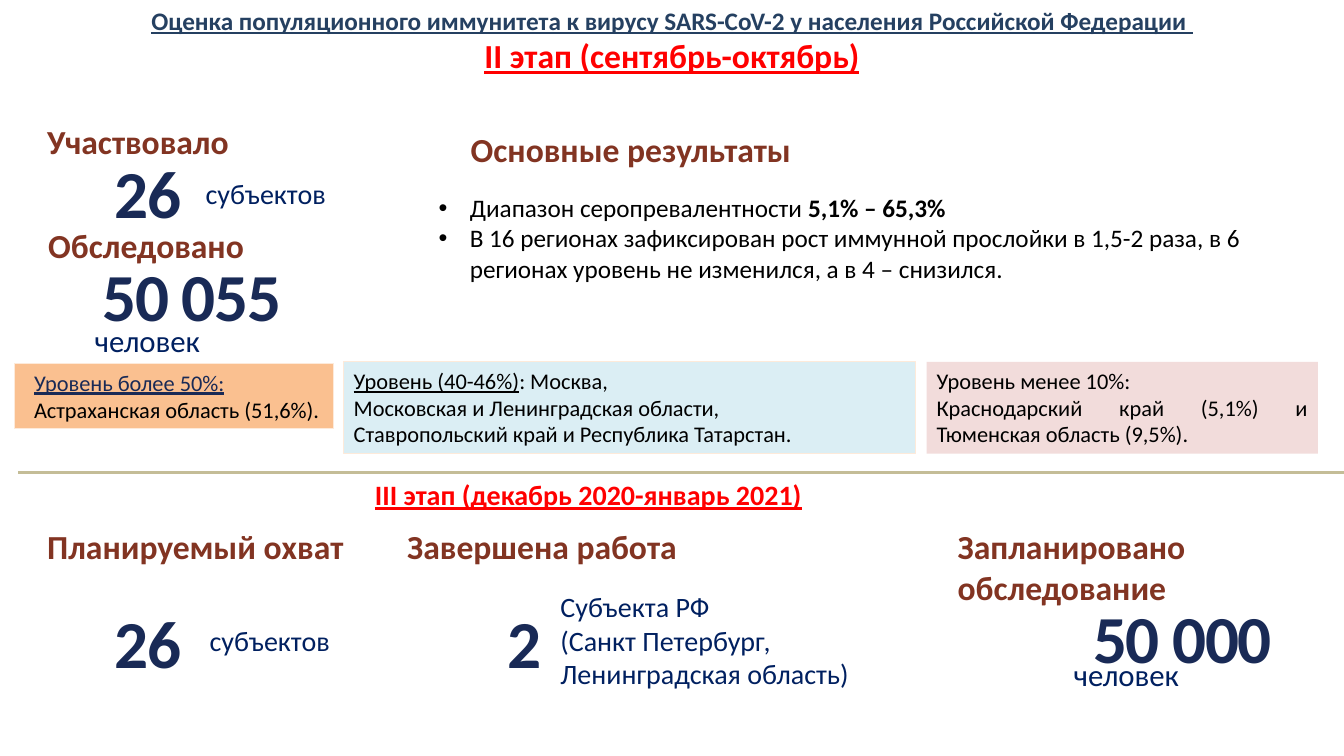
from dataclasses import dataclass

from lxml import etree
from pptx import Presentation
from pptx import util as u
from pptx.dml.color import RGBColor
from pptx.enum import shapes, text
from pptx.oxml import ns

PX = 9144
FONT = "Calibri"
BLACK, RED, NAVY, BLUE, BROWN, SLATE = "000000", "FF0000", "192A56", "002060", "823422", "254061"
LEFT, CENTER, RIGHT, JUSTIFY = (
    text.PP_ALIGN.LEFT, text.PP_ALIGN.CENTER, text.PP_ALIGN.RIGHT, text.PP_ALIGN.JUSTIFY)


@dataclass(frozen=True)
class Area:
    left: int
    top: int
    width: int
    height: int

    def emu(self) -> list[int]:
        return [px(n) for n in (self.left, self.top, self.width, self.height)]


@dataclass(frozen=True)
class Span:
    words: str
    bold: bool = False
    underline: bool = False
    color: str = BLACK


@dataclass(frozen=True)
class Label:
    area: Area
    lines: tuple[str, ...]
    size: int
    color: str


@dataclass(frozen=True)
class LevelBox:
    area: Area
    fill: str
    border: str | None
    align: text.PP_ALIGN
    indent: int
    lines: tuple[tuple[Span, ...], ...]


LABELS = (
    Label(Area(194, 170, 221, 44), ("субъектов",), 20, BLUE),
    Label(Area(84, 314, 227, 47), ("человек",), 22, BLUE),
    Label(Area(198, 614, 221, 44), ("субъектов",), 20, BLUE),
    Label(Area(1055, 646, 280, 47), ("человек",), 22, BLUE),
    Label(Area(546, 580, 476, 111),
          ("Субъекта РФ", "(Санкт Петербург,", "Ленинградская область)"), 20, BLUE),
    Label(Area(37, 115, 330, 50), ("Участвовало",), 24, BROWN),
    Label(Area(38, 218, 341, 50), ("Обследовано",), 24, BROWN),
    Label(Area(457, 123, 578, 50), ("Основные результаты",), 24, BROWN),
    Label(Area(37, 517, 330, 91), ("Планируемый охват",), 24, BROWN),
    Label(Area(394, 517, 330, 91), ("Завершена работа",), 24, BROWN),
    Label(Area(940, 517, 454, 91), ("Запланировано обследование",), 24, BROWN),
    Label(Area(37, 154, 153, 83), ("26",), 48, NAVY),
    Label(Area(16, 256, 273, 83), ("50 055",), 48, NAVY),
    Label(Area(37, 601, 153, 83), ("26",), 48, NAVY),
    Label(Area(394, 601, 153, 83), ("2",), 48, NAVY),
    Label(Area(940, 596, 345, 83), ("50 000 ",), 48, NAVY),
)

LEVEL_BOXES = (
    LevelBox(Area(14, 361, 317, 64), "FAC090", "FDEADA", LEFT, 10, (
        (Span("Уровень более 50%:", underline=True, color=NAVY),
         Span(" Астраханская область (51,6%)."),),)),
    LevelBox(Area(919, 359, 388, 91), "F2DCDB", None, JUSTIFY, 0, (
        (Span("Уровень менее 10%: "),),
        (Span("Краснодарский край (5,1%) и Тюменская область (9,5%). "),))),
    LevelBox(Area(341, 359, 567, 91), "DBEEF4", "FDEADA", JUSTIFY, 0, (
        (Span("Уровень (40-46%)", underline=True), Span(": Москва,")),
        (Span("Московская и Ленинградская области,"),),
        (Span("Ставропольский край и Республика Татарстан."),))),
)

RESULTS = (
    (Span("Диапазон серопревалентности "), Span("5,1% – 65,3%", bold=True)),
    (Span("В 16 регионах зафиксирован рост иммунной прослойки в 1,5-2 раза, в 6 "
          "регионах уровень не изменился, а в 4 – снизился."),),
)


def px(length: int) -> int:
    return length * PX


def rgb(color: str) -> RGBColor:
    return RGBColor.from_string(color)


def write_text(paragraph, words: str, *, size: int, color: str, bold: bool = False,
               underline: bool = False, spacing: int = 0) -> None:
    run = paragraph.add_run()
    run.text = words
    font = run.font
    font.name, font.size, font.bold, font.underline = FONT, u.Pt(size), bold, underline
    font.color.rgb = rgb(color)
    if spacing:
        run._r.get_or_add_rPr().set("spc", str(spacing * 100))


def paragraphs(shape, count: int, align: text.PP_ALIGN = LEFT) -> list:
    frame = shape.text_frame
    frame.word_wrap = True
    frame.auto_size = text.MSO_AUTO_SIZE.NONE
    frame.vertical_anchor = text.MSO_ANCHOR.TOP
    for _ in range(count - 1):
        frame.add_paragraph()
    for paragraph in frame.paragraphs:
        paragraph.alignment = align
        paragraph.space_before = u.Pt(0)
    return list(frame.paragraphs)


def write_spans(paragraph, spans: tuple[Span, ...], size: int) -> None:
    for span in spans:
        write_text(paragraph, span.words, size=size, color=span.color,
                   bold=span.bold, underline=span.underline)


def indent(paragraph, left: int, first: int) -> None:
    properties = paragraph._p.get_or_add_pPr()
    properties.set("marL", str(px(left)))
    properties.set("indent", str(px(first)))


def place(shape, area: Area) -> None:
    shape.left, shape.top, shape.width, shape.height = area.emu()


def draw_label(slide, label: Label) -> None:
    shape = slide.shapes.add_textbox(*label.area.emu())
    is_number = label.size == 48
    align = RIGHT if is_number else LEFT
    for paragraph, words in zip(paragraphs(shape, len(label.lines), align), label.lines):
        if is_number:
            paragraph.line_spacing = 0.9
        write_text(paragraph, words, size=label.size, color=label.color,
                   bold=label.color != BLUE, spacing=-1 if is_number else 0)


def draw_level_box(slide, box: LevelBox) -> None:
    shape = slide.shapes.add_shape(shapes.MSO_SHAPE.RECTANGLE, *box.area.emu())
    shape.shadow.inherit = False
    shape.fill.solid()
    shape.fill.fore_color.rgb = rgb(box.fill)
    if box.border:
        shape.line.color.rgb = rgb(box.border)
        shape.line.width = u.Pt(0.75)
    else:
        shape.line.fill.background()
    for paragraph, spans in zip(paragraphs(shape, len(box.lines), box.align), box.lines):
        indent(paragraph, box.indent, 0)
        write_spans(paragraph, spans, 16)


def draw_divider(slide) -> None:
    line = slide.shapes.add_connector(
        shapes.MSO_CONNECTOR.STRAIGHT, px(18), px(469), px(1333), px(469))
    line.line.color.rgb = rgb("C4BD97")
    line.line.width = u.Pt(2.25)
    etree.SubElement(line._element.spPr, ns.qn("a:effectLst"))


def main() -> None:
    presentation = Presentation()
    presentation.slide_width, presentation.slide_height = px(1333), px(750)
    slide = presentation.slides.add_slide(presentation.slide_layouts[1])

    title, results = slide.placeholders
    place(title, Area(0, 0, 1333, 81))
    heading, stage = paragraphs(title, 2, CENTER)
    write_text(heading, "Оценка популяционного иммунитета к вирусу SARS-CoV-2 "
               "у населения Российской Федерации ",
               size=18, color=SLATE, bold=True, underline=True)
    write_text(stage, "II этап (сентябрь-октябрь)",
               size=24, color=RED, bold=True, underline=True)

    place(results, Area(425, 186, 850, 101))
    for paragraph, spans in zip(paragraphs(results, len(RESULTS)), RESULTS):
        indent(paragraph, 31, -31)
        write_spans(paragraph, spans, 18)

    for label in LABELS:
        draw_label(slide, label)
    for box in LEVEL_BOXES:
        draw_level_box(slide, box)

    next_stage = slide.shapes.add_textbox(*Area(362, 469, 689, 44).emu())
    write_text(paragraphs(next_stage, 1)[0], "III этап (декабрь 2020-январь 2021)",
               size=20, color=RED, bold=True, underline=True)
    draw_divider(slide)
    presentation.save("out.pptx")


if __name__ == "__main__":
    main()
